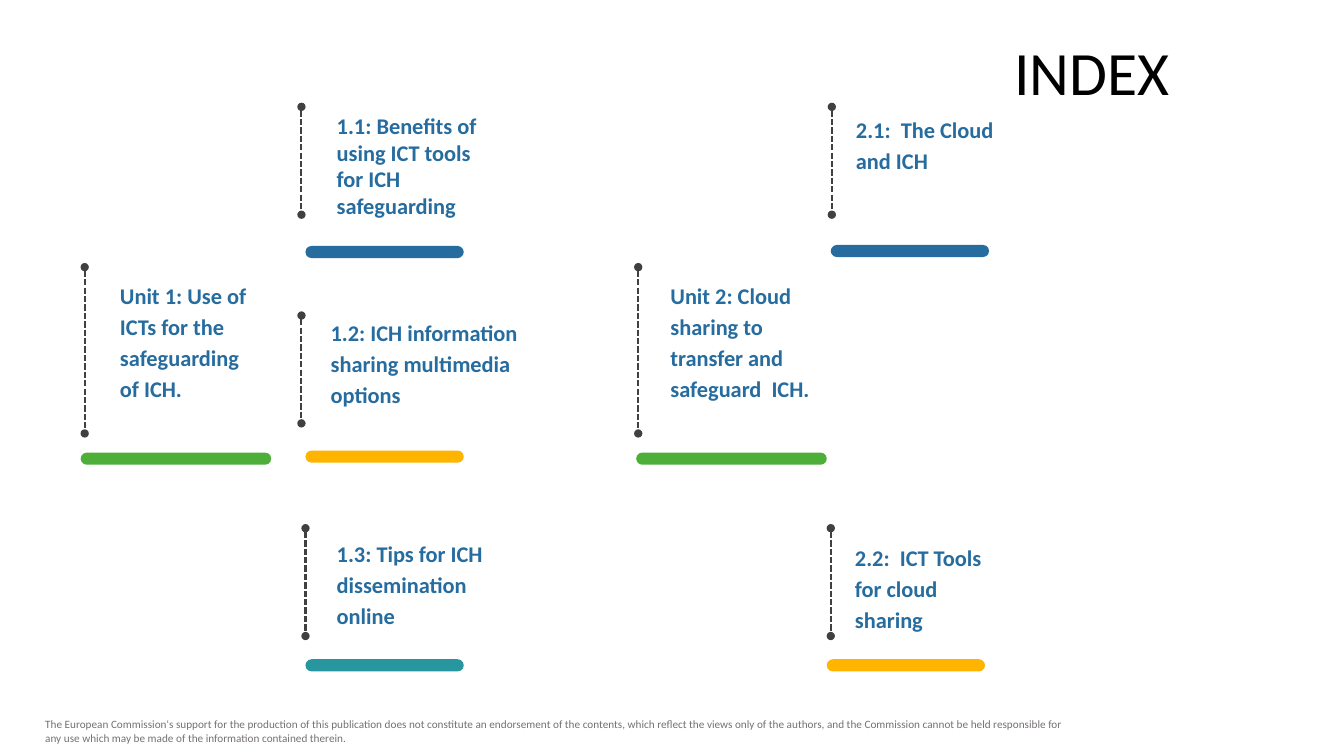
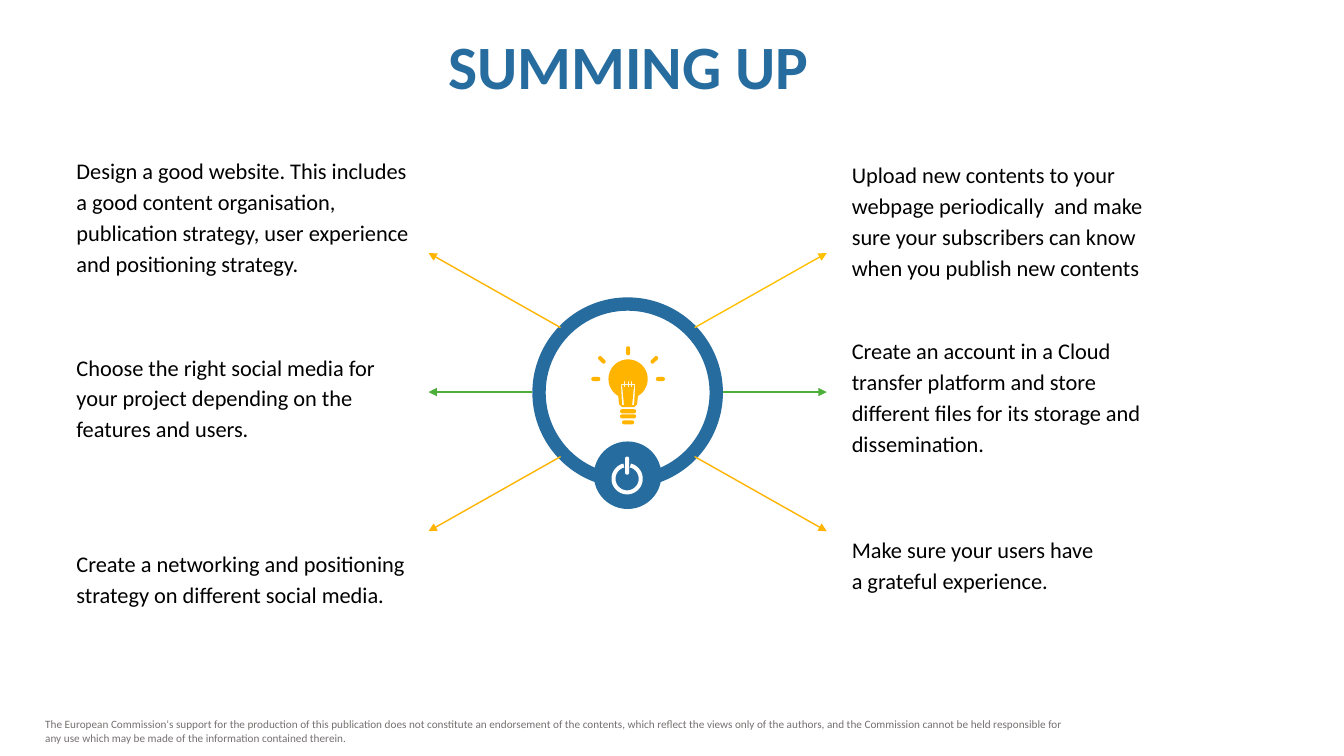
from dataclasses import dataclass
from math import cos, radians, sin

from lxml.etree import SubElement
from pptx import Presentation
from pptx.dml.color import RGBColor as Rgb
from pptx.enum.dml import MSO_LINE as Dash
from pptx.enum.shapes import MSO_CONNECTOR as Link, MSO_SHAPE as Kind
from pptx.enum.text import MSO_ANCHOR as Anchor, MSO_AUTO_SIZE as Fit, PP_ALIGN as Align
from pptx.oxml.ns import qn
from pptx.util import Pt

PX = 9144  # one px is a hundredth of an inch


@dataclass(frozen=True)
class Theme:
    font: str = "Calibri"
    blue: str = "266C9F"
    green: str = "4EAE3A"
    teal: str = "27969F"
    amber: str = "FFB500"
    gold: str = "FFC000"
    dark: str = "404040"
    gray: str = "767171"
    black: str = "000000"
    white: str = "FFFFFF"
    head: int = 44
    body: int = 16
    note: int = 8


T = Theme()
NOTE = ("The European Commission's support for the production of this publication does not "
        "constitute an endorsement of the contents, which reflect the views only of the authors, "
        "and the Commission cannot be held responsible for any use which may be made of the "
        "information contained therein.")


# Basic parts
def emu(*nums):
    return [round(n * PX) for n in nums]


def bind(text):
    """Keep the article "a" on the line of the word after it."""
    return text.replace(" a ", " a" + chr(160))


def write(frame, text, size=T.body, color=T.black, bold=False, align=Align.LEFT,
          gap=1.0, anchor=Anchor.TOP, inset=10):
    frame.word_wrap = True
    frame.auto_size = Fit.NONE
    frame.vertical_anchor = anchor
    frame.margin_left = frame.margin_right = inset * PX
    frame.margin_top = frame.margin_bottom = 5 * PX
    para = frame.paragraphs[0]
    para.text = text
    para.alignment = align
    para.line_spacing = gap
    font = para.font
    font.name, font.size, font.bold = T.font, Pt(size), bold
    font.color.rgb = Rgb.from_string(color)


def label(slide, box, text, **look):
    item = slide.shapes.add_textbox(*emu(*box))
    write(item.text_frame, text, **look)
    return item


def title(slide, box, text, **look):
    item = slide.shapes.title
    item.left, item.top, item.width, item.height = emu(*box)
    write(item.text_frame, text, size=T.head, gap=0.9, anchor=Anchor.MIDDLE, **look)


def paint(item, color):
    item.shadow.inherit = False
    item.fill.solid()
    item.fill.fore_color.rgb = Rgb.from_string(color)
    item.line.fill.background()


def shape(slide, kind, box, color, adjust=()):
    item = slide.shapes.add_shape(kind, *emu(*box))
    paint(item, color)
    for i, value in enumerate(adjust):
        item.adjustments[i] = value


def line(slide, start, end, color, width=1.0, dash=None, head=None, tail=None):
    item = slide.shapes.add_connector(Link.STRAIGHT, *emu(*start, *end))
    item.line.color.rgb = Rgb.from_string(color)
    item.line.width = Pt(width)
    if dash:
        item.line.dash_style = dash
    props = item.element.spPr
    stroke = props.find(qn("a:ln"))
    for tag, mark in (("a:headEnd", head), ("a:tailEnd", tail)):
        if mark:
            SubElement(stroke, qn(tag)).set("type", mark)
    SubElement(props, qn("a:effectLst"))


# Outlines, as points around a centre
def arc(r, start, end, step=10):
    return [(r * cos(radians(a)), r * sin(radians(a))) for a in range(start, end, step)]


def pill(x, y, long, thick, turn=0):
    r, half = thick / 2, (long - thick) / 2
    c, s = cos(radians(turn)), sin(radians(turn))
    ends = [(px + half, py) for px, py in arc(r, -90, 91, 30)]
    ends += [(px - half, py) for px, py in arc(r, 90, 271, 30)]
    return [(x + px * c - py * s, y + px * s + py * c) for px, py in ends]


def draw(slide, x, y, loops, color):
    pen = None
    for loop in loops:
        first, *rest = [emu(x + px, y + py) for px, py in loop]
        if pen is None:
            pen = slide.shapes.build_freeform(*first, scale=1.0)
        else:
            pen.move_to(*first)
        pen.add_line_segments(rest, close=True)
    paint(pen.convert_to_shape(), color)


# Index slide: a dashed rule, its text and a colour bar below
def entry(slide, box, text, note, bar, color, gap=1.15):
    x, y, high = box
    line(slide, (x, y), (x, y + high), T.dark, 1.5, Dash.SQUARE_DOT, "oval", "oval")
    dx, dy, wide = note
    label(slide, (x + dx, y + dy, wide, high), text, color=T.blue, bold=True, gap=gap, inset=12)
    dx, dy, wide = bar
    shape(slide, Kind.ROUNDED_RECTANGLE, (x + dx, y + dy, wide, 12), color, [0.5])


def index(slide):
    title(slide, (309, 35, 861, 79), "INDEX", align=Align.RIGHT)
    # Units: rule x, text, text offset and width, bar offset
    for x, text, note, dx in (
        (84, "Unit 1: Use of ICTs for the safeguarding of ICH.", (23, 6, 162), -4),
        (633, "Unit 2: Cloud sharing to transfer and safeguard  ICH.", (20, 6, 183), -2),
    ):
        entry(slide, (x, 265, 165), text, note, (dx, 184, 189), T.green)
    # Topics: rule place, text, text offset and width, bar offset, colour, spacing
    for x, y, text, note, bar, color, gap in (
        (299, 106, "1.1: Benefits of using ICT tools for ICH safeguarding",
         (23, 0, 173), (4, 138), T.blue, 1.0),
        (299, 313, "1.2: ICH information sharing multimedia options",
         (17, -5, 214), (4, 134), T.amber, 1.15),
        (303, 524, "1.3: Tips for ICH dissemination online",
         (19, 3, 173), (0, 130), T.teal, 1.15),
        (825, 106, "2.1:  The Cloud and ICH", (12, 0, 173), (-1, 137), T.blue, 1.15),
        (824, 524, "2.2:  ICT Tools for cloud sharing",
         (12, 7, 173), (-4, 130), T.amber, 1.15),
    ):
        entry(slide, (x, y, 107), text, note, (*bar, 157), color, gap)


# Light bulb around the centre of its glass
def bulb(slide, x, y):
    glass = arc(19.5, 120, 421) + [(9, 25), (6, 28), (-6, 28), (-9, 25)]
    rays = [pill(dx, dy, 9, 4, turn) for dx, dy, turn in (
        (-32, 0, 0), (-26, -19, 45), (0, -28, 90), (26, -19, 135), (32, 0, 0))]
    base = [pill(0, dy, long, 4) for dy, long in ((32, 16), (37, 16), (43, 12))]
    # Filament, cut out of the glass
    wire = [(-6, 26), (-7, 5)]
    for t in (-4, 0, 3):
        wire += [(t, 5), (t, 2), (t + 1, 2), (t + 1, 5)]
    wire += [(7, 5), (6, 26), (4, 26), (6, 6)]
    for t in (3, 0, -4):
        wire += [(t + 1, 6), (t + 1, 8), (t, 8), (t, 6)]
    wire += [(-6, 6), (-4, 26)]
    draw(slide, x, y, [glass, wire, *rays, *base], T.amber)


# Power button around its centre
def power(slide, x, y):
    shape(slide, Kind.OVAL, (x - 33, y - 33, 67, 67), T.blue)
    ring = arc(15.5, -76, 257, 4) + arc(11.5, -76, 257, 4)[::-1]
    draw(slide, x, y + 4, [ring, pill(0, -13, 18, 4, 90)], T.white)


# Ring with its icons and six arrows
def hub(slide, x, y):
    shape(slide, Kind.DONUT, (x - 94, y - 94, 189, 189), T.blue, [0.07])
    power(slide, x, y + 82)
    bulb(slide, x + 1, y - 13)
    for side, rise, color in ((-1, -1, T.amber), (-1, 0, T.green), (-1, 1, T.amber),
                              (1, -1, T.gold), (1, 0, T.green), (1, 1, T.amber)):
        near, far = 67 if rise else 95, 198
        mid = x + (side < 0)
        line(slide, (mid + side * near, y + rise * 64),
             (mid + side * far, y + rise * 138), color, tail="triangle")


def summary(slide):
    title(slide, (287, 29, 673, 79), "SUMMING UP", color=T.blue, bold=True, align=Align.CENTER)
    hub(slide, 622, 389)
    left = (
        (147, "Design a good website. This includes a good content organisation, "
              "publication strategy, user experience and positioning strategy."),
        (342, "Choose the right social media for your project depending on the "
              "features and users."),
        (537, "Create a networking and positioning strategy on different social media."),
    )
    right = (
        (151, "Upload new contents to your webpage periodically  and make sure your "
              "subscribers can know when you publish new contents"),
        (326, "Create an account in a Cloud transfer platform and store different files "
              "for its storage and dissemination."),
        (523, "Make sure your users have a grateful experience."),
    )
    for x, wide, tips in ((66, 352, left), (835, 330, right)):
        for y, text in tips:
            label(slide, (x, y, wide, 132), bind(text), gap=1.15)


def main():
    deck = Presentation()
    deck.slide_width, deck.slide_height = emu(1333, 750)
    layout = deck.slide_layouts[5]
    for number, build in enumerate((index, summary)):
        slide = deck.slides.add_slide(layout)
        if number == 0:
            # The shared footer lives on the layout
            foot = label(slide, (35, 707, 1046, 37), NOTE, size=T.note, color=T.gray)
            layout.shapes.element.append(foot.element)
        build(slide)
    deck.save("out.pptx")


if __name__ == "__main__":
    main()
